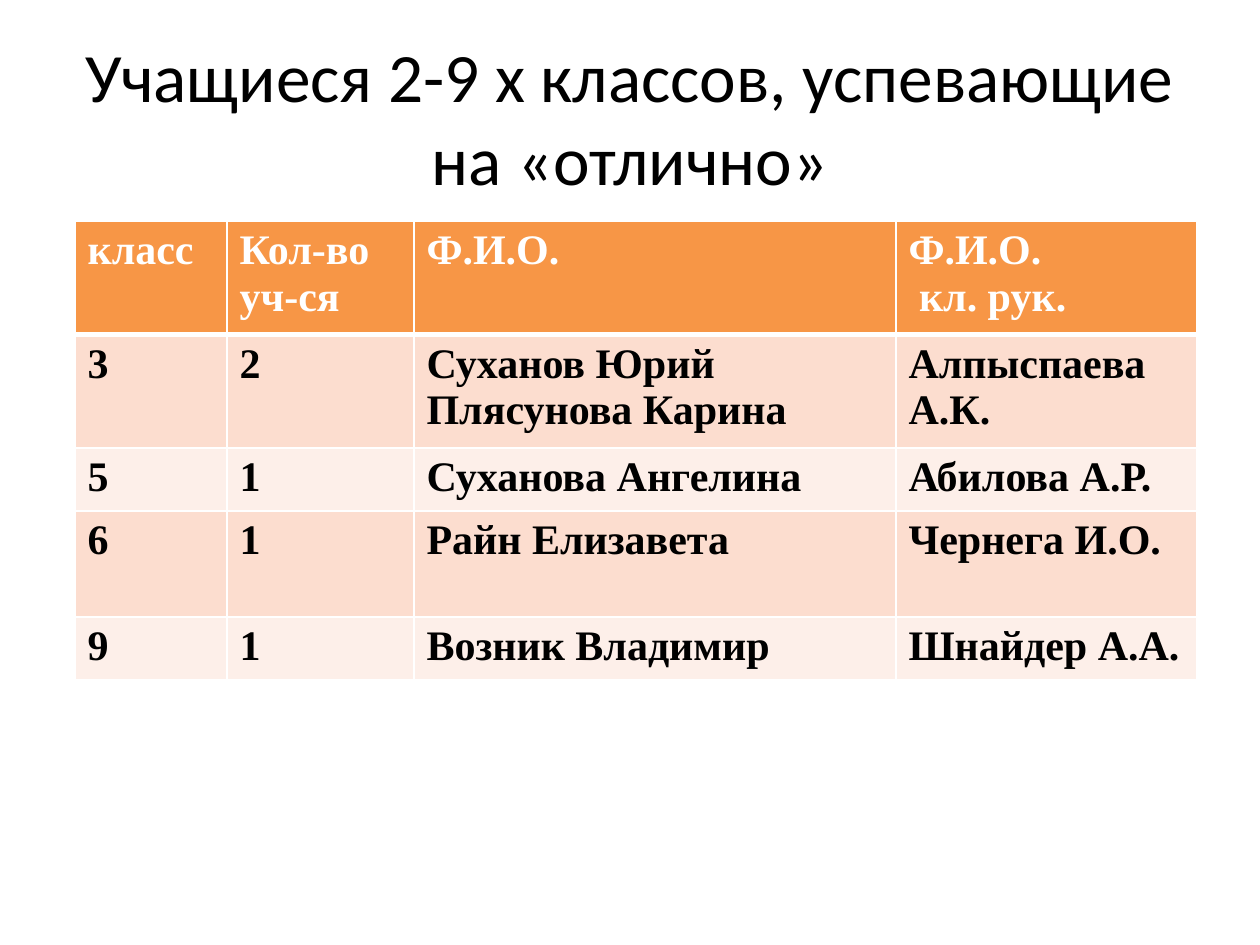
"""Build a slide listing the pupils with excellent marks."""
from lxml.etree import SubElement
from pptx import Presentation
from pptx.dml.color import RGBColor
from pptx.enum.text import MSO_ANCHOR, PP_ALIGN
from pptx.oxml.ns import qn
from pptx.util import Pt

TITLE = "Учащиеся 2-9 х классов, успевающие на «отлично»"
PUPILS = [
    ("класс", "Кол-во уч-ся", "Ф.И.О.", "Ф.И.О.\n кл. рук."),
    ("3", "2", "Суханов Юрий\nПлясунова Карина", "Алпыспаева А.К."),
    ("5", "1", "Суханова Ангелина", "Абилова А.Р."),
    ("6", "1", "Райн Елизавета", "Чернега И.О."),
    ("9", "1", "Возник Владимир", "Шнайдер А.А."),
]
COLUMN_WIDTHS = [152, 187, 482, 301]
ROW_HEIGHTS = [105, 105, 59, 106, 59]
HEADER_FILL, BAND_FILLS = "F79646", ("FDEFE9", "FCDDCF")
WHITE, BLACK = "FFFFFF", "000000"
SCALE = 914400 // 126


def px(length):
    return length * SCALE


def color(value):
    return RGBColor.from_string(value)


def style(paragraph, face, size, ink, bold=False):
    font = paragraph.font
    font.name, font.size, font.bold = face, Pt(size), bold
    font.color.rgb = color(ink)


def add_borders(cell, row):
    properties = cell._tc.get_or_add_tcPr()
    widths = {"L": 1, "R": 1, "T": 3 if row == 1 else 1, "B": 3 if row == 0 else 1}
    for side, width in widths.items():
        line = SubElement(properties, qn(f"a:ln{side}"), w=str(Pt(width)))
        SubElement(SubElement(line, qn("a:solidFill")), qn("a:srgbClr"), val=WHITE)


def add_title(slide):
    title = slide.shapes.add_textbox(px(63), px(38), px(1134), px(157)).text_frame
    title.word_wrap = True
    title.vertical_anchor = MSO_ANCHOR.MIDDLE
    title.text = TITLE
    title.paragraphs[0].alignment = PP_ALIGN.CENTER
    style(title.paragraphs[0], "Calibri", 39.6, BLACK)


def add_pupils(slide):
    table = slide.shapes.add_table(
        len(PUPILS), len(COLUMN_WIDTHS), px(75), px(221),
        px(sum(COLUMN_WIDTHS)), px(sum(ROW_HEIGHTS))).table
    for column, width in zip(table.columns, COLUMN_WIDTHS):
        column.width = px(width)
    for row, (entries, height) in enumerate(zip(PUPILS, ROW_HEIGHTS)):
        table.rows[row].height = px(height)
        for column, entry in enumerate(entries):
            cell = table.cell(row, column)
            cell.text = entry
            add_borders(cell, row)
            cell.fill.solid()
            cell.fill.fore_color.rgb = color(BAND_FILLS[row % 2] if row else HEADER_FILL)
            for paragraph in cell.text_frame.paragraphs:
                style(paragraph, "Times New Roman", 24, BLACK if row else WHITE, True)


def main():
    deck = Presentation()
    deck.slide_width, deck.slide_height = px(1260), px(945)
    slide = deck.slides.add_slide(deck.slide_layouts[6])
    add_title(slide)
    add_pupils(slide)
    deck.save("out.pptx")


if __name__ == "__main__":
    main()
